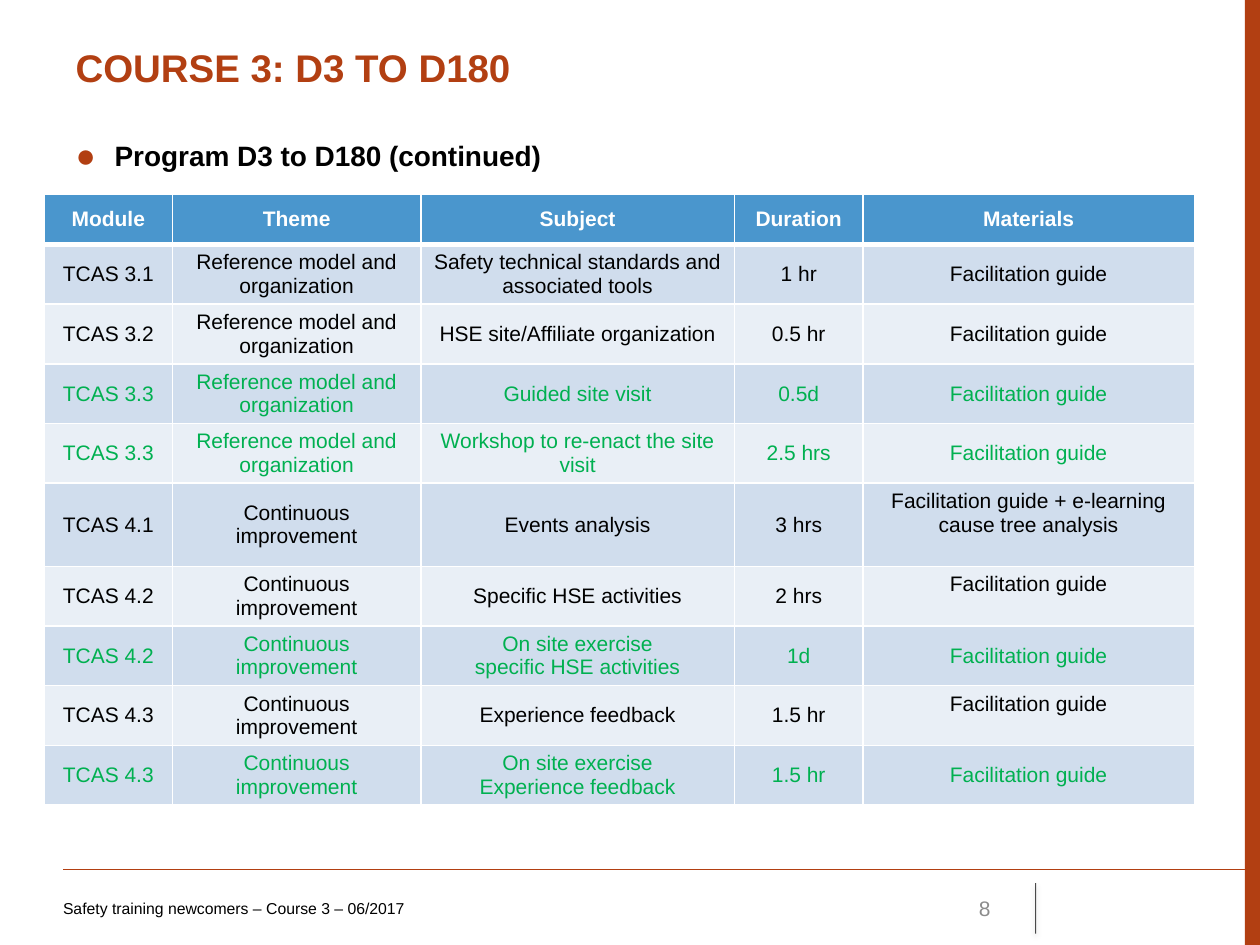
import pptx
import pptx.dml.color
import pptx.enum.shapes
import pptx.enum.text
import pptx.oxml
import pptx.oxml.ns
import pptx.util

ALIGN = pptx.enum.text.PP_ALIGN
ANCHOR = pptx.enum.text.MSO_ANCHOR
DRAWING = pptx.oxml.ns.nsdecls("a")
RUST, BLACK, WHITE, GREEN = "B23F12", "000000", "FFFFFF", "00B050"
HEADER_BLUE, BAND_DARK, BAND_LIGHT = "4A96CD", "D0DDED", "E9EFF6"


def color(code):
    return pptx.dml.color.RGBColor.from_string(code)


def write(frame, text, size=12, ink=BLACK, bold=False, align=ALIGN.LEFT):
    frame.word_wrap = True
    for number, line in enumerate(text.split("\n")):
        para = frame.add_paragraph() if number else frame.paragraphs[0]
        para.alignment = align
        span = para.add_run()
        span.text = line
        span.font.name = "Arial"
        span.font.size = pptx.util.Pt(size)
        span.font.bold = bold
        span.font.color.rgb = color(ink)


deck = pptx.Presentation()
deck.slide_width = pptx.util.Inches(10)
deck.slide_height = pptx.util.Inches(7.5)
column = deck.slide_width // 1000
row = deck.slide_height // 750
page = deck.slides.add_slide(deck.slide_layouts[1])

side_bar = page.shapes.add_shape(
    pptx.enum.shapes.MSO_SHAPE.RECTANGLE, 988 * column, 0, 12 * column, 750 * row)
side_bar.shadow.inherit = False
side_bar.fill.solid()
side_bar.fill.fore_color.rgb = color(RUST)
side_bar.line.fill.background()

shadow = ('<a:outerShdw blurRad="39370" dist="20320" dir="5400000" rotWithShape="0">'
          '<a:srgbClr val="000000"><a:alpha val="38000"/></a:srgbClr></a:outerShdw>')
for left, top, right, bottom, ink, weight, effect in [
    (50, 690, 1000, 690, RUST, 0.75, ""),
    (822, 701, 822, 741, BLACK, 0.5, shadow),
]:
    rule = page.shapes.add_connector(
        pptx.enum.shapes.MSO_CONNECTOR.STRAIGHT,
        left * column, top * row, right * column, bottom * row)
    rule.line.color.rgb = color(ink)
    rule.line.width = pptx.util.Pt(weight)
    rule._element.spPr.append(pptx.oxml.parse_xml(
        f"<a:effectLst {DRAWING}>{effect}</a:effectLst>"))
divider_ink = rule._element.spPr.find(".//" + pptx.oxml.ns.qn("a:srgbClr"))
divider_ink.append(pptx.oxml.parse_xml(f'<a:alpha {DRAWING} val="70000"/>'))

title = page.shapes.title
body = page.placeholders[1]
for box, top, height, text, size, ink in [
    (title, 30, 69, "COURSE 3: D3 TO D180", 22, RUST),
    (body, 101, 47, "Program D3 to D180 (continued)", 16, BLACK),
]:
    box.left, box.top = 50 * column, top * row
    box.width, box.height = 899 * column, height * row
    box.text_frame.auto_size = pptx.enum.text.MSO_AUTO_SIZE.NONE
    box.text_frame.vertical_anchor = ANCHOR.TOP
    write(box.text_frame, text, size=size, ink=ink, bold=True)

body.text_frame.margin_top = 9 * row
para = body.text_frame.paragraphs[0]
para.space_before = pptx.util.Pt(0)
para.space_after = pptx.util.Pt(3)
bullet = para._p.get_or_add_pPr()
bullet.set("marL", str(31 * column))
bullet.set("indent", str(-31 * column))
for markup in [
    f'<a:buClr {DRAWING}><a:srgbClr val="{RUST}"/></a:buClr>',
    f'<a:buSzPct {DRAWING} val="120000"/>',
    f'<a:buFont {DRAWING} typeface="Arial"/>',
    f'<a:buChar {DRAWING} char="●"/>',
]:
    bullet.append(pptx.oxml.parse_xml(markup))

MODEL = "Reference model and organization"
IMPROVEMENT = "Continuous improvement"
GUIDE = "Facilitation guide"
program = [
    (WHITE, "Module", "Theme", "Subject", "Duration", "Materials"),
    (BLACK, "TCAS 3.1", MODEL, "Safety technical standards and associated tools", "1 hr", GUIDE),
    (BLACK, "TCAS 3.2", MODEL, "HSE site/Affiliate organization", "0.5 hr", GUIDE),
    (GREEN, "TCAS 3.3", MODEL, "Guided site visit", "0.5d", GUIDE),
    (GREEN, "TCAS 3.3", MODEL, "Workshop to re-enact the site visit", "2.5 hrs", GUIDE),
    (BLACK, "TCAS 4.1", IMPROVEMENT, "Events analysis", "3 hrs",
     GUIDE + " + e-learning cause tree analysis"),
    (BLACK, "TCAS 4.2", IMPROVEMENT, "Specific HSE activities", "2 hrs", GUIDE),
    (GREEN, "TCAS 4.2", IMPROVEMENT, "On site exercise\nspecific HSE activities", "1d", GUIDE),
    (BLACK, "TCAS 4.3", IMPROVEMENT, "Experience feedback", "1.5 hr", GUIDE),
    (GREEN, "TCAS 4.3", IMPROVEMENT, "On site exercise\nExperience feedback", "1.5 hr", GUIDE),
]
widths = [102, 197, 249, 102, 263]
heights = [40] + [47] * 4 + [66] + [47] * 4
top_aligned = {(5, 4), (6, 4), (8, 4)}

table = page.shapes.add_table(
    len(program), len(widths), 35 * column, 154 * row,
    sum(widths) * column, sum(heights) * row).table
for index, width in enumerate(widths):
    table.columns[index].width = width * column
for line, (ink, *texts) in enumerate(program):
    table.rows[line].height = heights[line] * row
    header = line == 0
    fill = HEADER_BLUE if header else BAND_DARK if line % 2 else BAND_LIGHT
    borders = {"lnL": 1, "lnR": 1, "lnT": 3 if line == 1 else 1, "lnB": 3 if header else 1}
    for index, text in enumerate(texts):
        cell = table.cell(line, index)
        cell.vertical_anchor = ANCHOR.TOP if (line, index) in top_aligned else ANCHOR.MIDDLE
        cell.fill.solid()
        cell.fill.fore_color.rgb = color(fill)
        write(cell.text_frame, text, ink=ink, bold=header, align=ALIGN.CENTER)
        for order, (side, weight) in enumerate(borders.items()):
            cell._tc.get_or_add_tcPr().insert(order, pptx.oxml.parse_xml(
                f'<a:{side} {DRAWING} w="{pptx.util.Pt(weight)}"><a:solidFill>'
                f'<a:srgbClr val="{WHITE}"/></a:solidFill></a:{side}>'))

for left, width, inset, text, size, ink, align in [
    (717, 79, 10, "8", 12, "8C8C8C", ALIGN.RIGHT),
    (50, 608, 0, "Safety training newcomers – Course 3 – 06/2017", 9, BLACK, ALIGN.LEFT),
]:
    box = page.shapes.add_textbox(left * column, 701 * row, width * column, 40 * row)
    box.text_frame.margin_left = inset * column
    box.text_frame.vertical_anchor = ANCHOR.MIDDLE
    write(box.text_frame, text, size=size, ink=ink, align=align)

deck.save("out.pptx")
